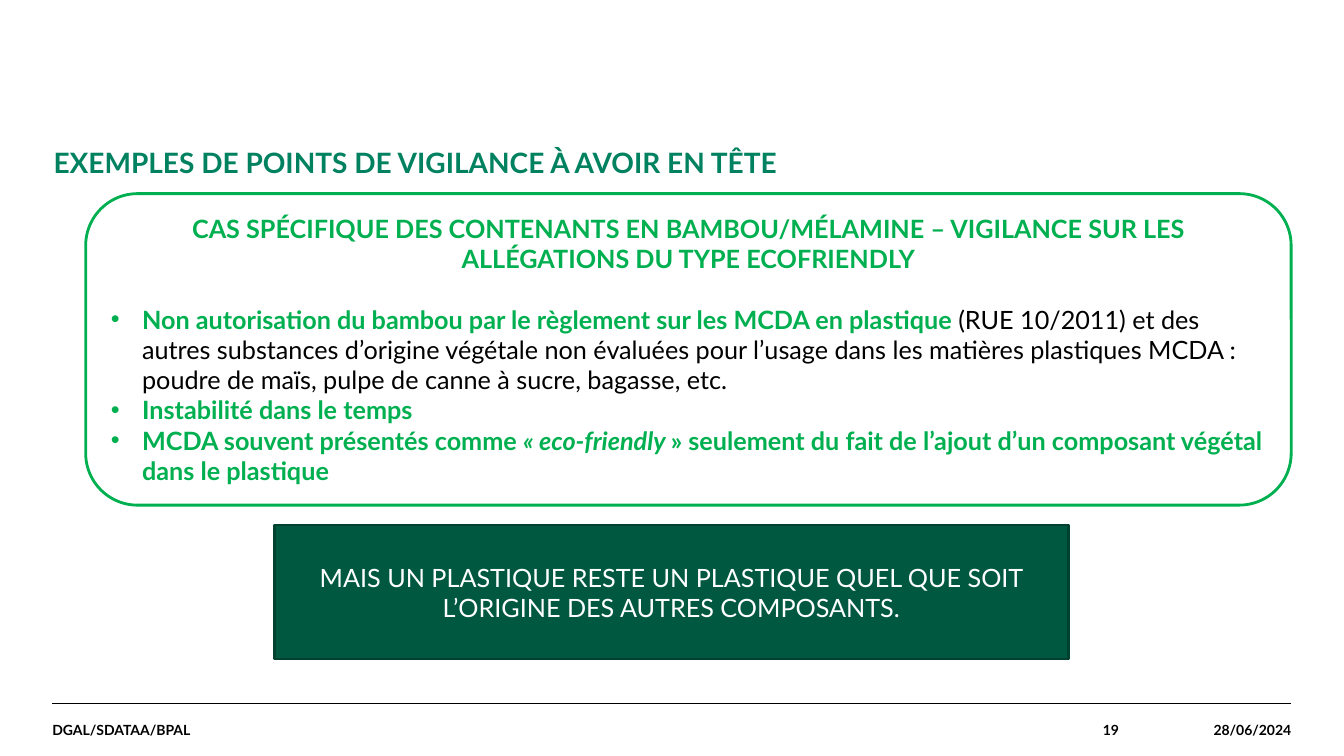
from lxml import etree
from pptx import Presentation
from pptx.dml.color import RGBColor
from pptx.enum.shapes import MSO_CONNECTOR, MSO_SHAPE
from pptx.enum.text import MSO_ANCHOR, PP_ALIGN
from pptx.oxml.ns import qn
from pptx.util import Cm, Pt

LINE = MSO_CONNECTOR.STRAIGHT
RECT, ROUNDED = MSO_SHAPE.RECTANGLE, MSO_SHAPE.ROUNDED_RECTANGLE
TOP, MIDDLE = MSO_ANCHOR.TOP, MSO_ANCHOR.MIDDLE
LEFT, CENTER, RIGHT = PP_ALIGN.LEFT, PP_ALIGN.CENTER, PP_ALIGN.RIGHT

BLACK = RGBColor(0x00, 0x00, 0x00)
WHITE = RGBColor(0xFF, 0xFF, 0xFF)
TEAL = RGBColor(0x00, 0x82, 0x60)
GREEN = RGBColor(0x00, 0xB0, 0x50)
DARK_GREEN = RGBColor(0x00, 0x58, 0x41)
DEEP_GREEN = RGBColor(0x00, 0x41, 0x30)

FONT = "Lato"
BULLET_INDENT = Cm(0.79)

CASE_TITLE = ("CAS SPÉCIFIQUE DES CONTENANTS EN BAMBOU/MÉLAMINE – VIGILANCE SUR LES "
              "ALLÉGATIONS DU TYPE ECOFRIENDLY")
# Each run: text, colour, bold, italic
CASE_POINTS = [
    [("Non autorisation du bambou par le règlement sur les MCDA en plastique ",
      GREEN, True, False),
     ("(RUE 10/2011) et des autres substances d’origine végétale non évaluées pour "
      "l’usage dans les matières plastiques MCDA : poudre de maïs, pulpe de canne à "
      "sucre, bagasse, etc.", BLACK, False, False)],
    [("Instabilité dans le temps", GREEN, True, False)],
    [("MCDA souvent présentés comme ", GREEN, True, False),
     ("« eco-friendly ", GREEN, True, True),
     ("» seulement du fait de l’ajout d’un composant végétal dans le plastique",
      GREEN, True, False)],
]
CONCLUSION = ("MAIS UN PLASTIQUE RESTE UN PLASTIQUE QUEL QUE SOIT L’ORIGINE DES AUTRES "
              "COMPOSANTS.")


def add_run(p, text, size, color, bold=False, italic=False):
    r = p.add_run()
    r.text = text
    r.font.name = FONT
    r.font.size = Pt(size)
    r.font.color.rgb = color
    r.font.bold = bold
    r.font.italic = italic


def add_bullet(p, color):
    pPr = p._p.get_or_add_pPr()
    pPr.set("marL", str(BULLET_INDENT))
    pPr.set("indent", str(-BULLET_INDENT))
    clr = etree.SubElement(pPr, qn("a:buClr"))
    etree.SubElement(clr, qn("a:srgbClr"), val=str(color))
    etree.SubElement(pPr, qn("a:buFont"), typeface="Arial")
    etree.SubElement(pPr, qn("a:buChar"), char="•")


def add_label(s, box, text, size, color, align=LEFT, anchor=MIDDLE):
    """Bold text box without margins."""
    tf = s.shapes.add_textbox(*box).text_frame
    tf.word_wrap = True
    tf.vertical_anchor = anchor
    tf.margin_left = tf.margin_right = tf.margin_top = tf.margin_bottom = 0
    p = tf.paragraphs[0]
    p.alignment = align
    add_run(p, text, size, color, bold=True)


def add_panel(s, box, kind, fill, outline):
    """Outlined shape; returns its text frame."""
    sp = s.shapes.add_shape(kind, *box)
    sp.shadow.inherit = False
    sp.fill.solid()
    sp.fill.fore_color.rgb = fill
    sp.line.color.rgb = outline
    sp.line.width = Pt(2)
    tf = sp.text_frame
    tf.word_wrap = True
    tf.vertical_anchor = MIDDLE
    return tf


def add_case(s, box):
    tf = add_panel(s, box, ROUNDED, WHITE, GREEN)
    p = tf.paragraphs[0]
    p.alignment = CENTER
    p.space_after = Pt(21.6)
    add_run(p, CASE_TITLE, 18, GREEN, bold=True)
    for runs in CASE_POINTS:
        p = tf.add_paragraph()
        add_bullet(p, GREEN)
        p.alignment = LEFT
        for text, color, bold, italic in runs:
            add_run(p, text, 18, color, bold, italic)


def add_conclusion(s, box):
    p = add_panel(s, box, RECT, DARK_GREEN, DEEP_GREEN).paragraphs[0]
    p.alignment = CENTER
    add_run(p, CONCLUSION, 18, WHITE)


def add_footer(s, box):
    left, top, width, height = box
    rule = s.shapes.add_connector(LINE, left, top, left + width, top)
    rule.line.color.rgb = BLACK
    rule.line.width = Pt(0.8)
    etree.SubElement(rule._element.spPr, qn("a:effectLst"))
    date_w, number_w = Cm(4.34), Cm(5)
    source_w = width - date_w - number_w
    x = left
    for text, w, align in [("DGAL/SDATAA/BPAL", source_w, LEFT),
                           ("19", number_w, RIGHT),
                           ("28/06/2024", date_w, RIGHT)]:
        add_label(s, (x, top, w, height), text, 10, BLACK, align)
        x += w


def main():
    prs = Presentation()
    prs.slide_width, prs.slide_height = Cm(33.87), Cm(19.05)
    s = prs.slides.add_slide(prs.slide_layouts[6])
    add_label(s, (Cm(1.35), Cm(3.66), Cm(29), Cm(1.24)),
              "EXEMPLES DE POINTS DE VIGILANCE À AVOIR EN TÊTE", 20, TEAL, anchor=TOP)
    add_case(s, (Cm(2.16), Cm(4.88), Cm(30.38), Cm(7.85)))
    add_conclusion(s, (Cm(6.91), Cm(13.23), Cm(20.02), Cm(3.38)))
    add_footer(s, (Cm(1.32), Cm(17.73), Cm(31.22), Cm(1.32)))
    prs.save("out.pptx")


if __name__ == "__main__":
    main()
